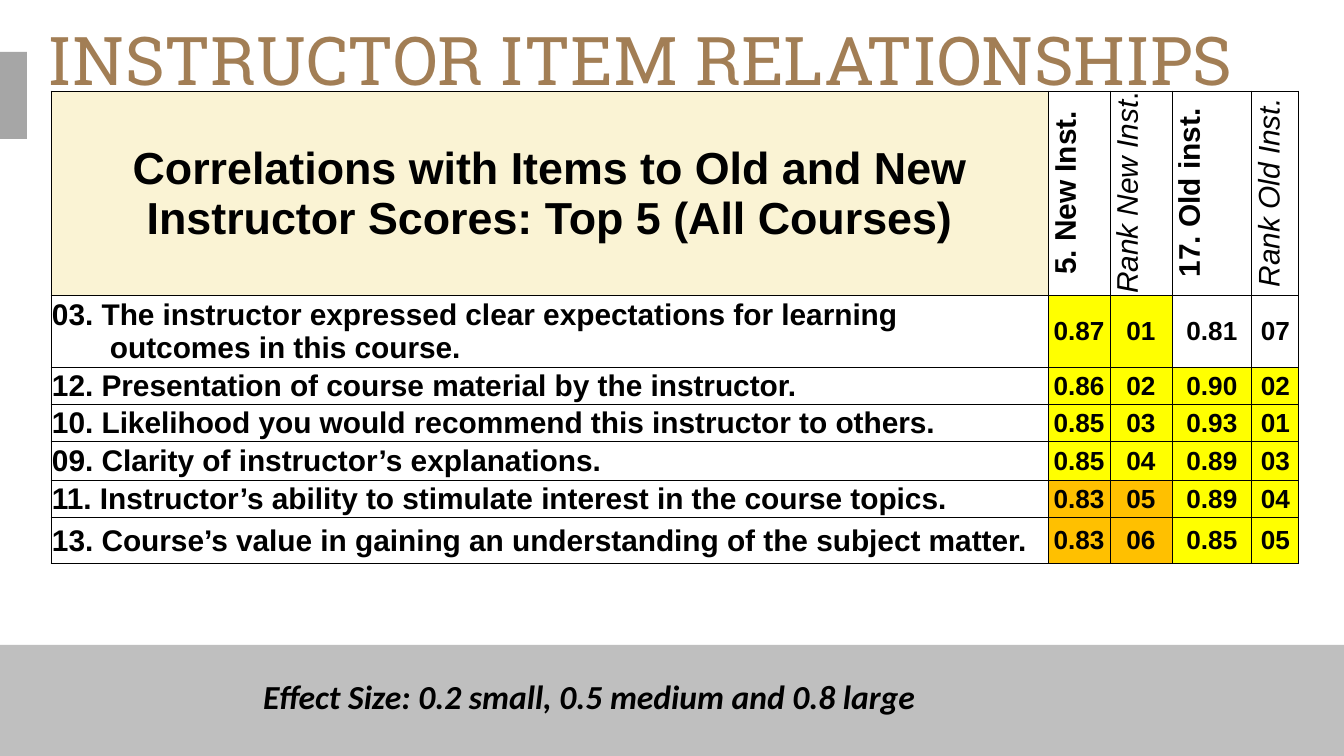
"""Build the slide on how items correlate with instructor scores."""
from dataclasses import dataclass

from lxml import etree
from pptx import Presentation
from pptx.dml.color import RGBColor
from pptx.enum.shapes import MSO_SHAPE
from pptx.enum.text import MSO_ANCHOR, MSO_AUTO_SIZE, PP_ALIGN
from pptx.oxml.ns import qn
from pptx.util import Pt

RECTANGLE = MSO_SHAPE.RECTANGLE
MIDDLE, BOTTOM = MSO_ANCHOR.MIDDLE, MSO_ANCHOR.BOTTOM
LEFT, CENTER = PP_ALIGN.LEFT, PP_ALIGN.CENTER
GROW = MSO_AUTO_SIZE.SHAPE_TO_FIT_TEXT
EMU_PER_PX = 914400 / 134.4


@dataclass(frozen=True)
class Theme:
    """Colours, fonts and type sizes."""
    ink: str = "000000"
    title: str = "A27E55"
    footer: str = "BFBFBF"
    tab: str = "A6A6A6"
    heading: str = "FAF3D4"
    plain: str = "FFFFFF"
    strong: str = "FFFF00"
    medium: str = "FFC000"
    title_font: str = "Roboto Slab"
    table_font: str = "Arial"
    note_font: str = "Calibri"
    title_size: int = 36
    heading_size: int = 24
    item_size: int = 16
    note_size: int = 18
    value_size: int = 14
    border: float = 0.5


THEME = Theme()
COLUMN_WIDTHS = (997, 62, 62, 80, 47)
ROW_HEIGHTS = (204, 69, 36, 34, 39, 37, 46)
CELL_MARGINS = {"margin_left": 1, "margin_right": 1, "margin_top": 1, "margin_bottom": 0}
NO_MARGINS = dict.fromkeys(CELL_MARGINS, 0)
CONTINUATION_INDENT = 58

HEADING = "Correlations with Items to Old and New Instructor Scores: Top 5 (All Courses)"
BOLD, ITALIC = {"bold": True}, {"italic": True}
SCORE_HEADINGS = (
    [("5. New Inst.", BOLD)],
    [("Rank New Inst", ITALIC), (".", {})],
    [("17. Old inst.", BOLD)],
    [("Rank Old Inst.", ITALIC)],
)
YELLOW, ORANGE, WHITE = THEME.strong, THEME.medium, THEME.plain
ITEMS = (
    (("03. The instructor expressed clear expectations for learning",
      "outcomes in this course."), ("0.87", "01", "0.81", "07"), YELLOW, WHITE),
    (("12. Presentation of course material by the instructor.",),
     ("0.86", "02", "0.90", "02"), YELLOW, YELLOW),
    (("10. Likelihood you would recommend this instructor to others.",),
     ("0.85", "03", "0.93", "01"), YELLOW, YELLOW),
    (("09. Clarity of instructor’s explanations.",),
     ("0.85", "04", "0.89", "03"), YELLOW, YELLOW),
    (("11. Instructor’s ability to stimulate interest in the course topics.",),
     ("0.83", "05", "0.89", "04"), ORANGE, YELLOW),
    (("13. Course’s value in gaining an understanding of the subject matter.",),
     ("0.83", "06", "0.85", "05"), ORANGE, YELLOW),
)


def px(length):
    """Turn pixels into EMU."""
    return round(length * EMU_PER_PX)


def apply(target, values):
    """Set each named attribute on the target."""
    for name, value in values.items():
        setattr(target, name, value)


def set_margins(target, margins):
    """Set margins given in pixels."""
    apply(target, {name: px(value) for name, value in margins.items()})


def add_run(paragraph, text, font, size, color=THEME.ink, **style):
    """Append a formatted run."""
    run = paragraph.add_run()
    run.text = text
    apply(run.font, {"name": font, "size": Pt(size), **style})
    run.font.color.rgb = RGBColor.from_string(color)


def add_bar(slide, bounds, color):
    """Add a plain filled rectangle."""
    bar = slide.shapes.add_shape(RECTANGLE, *map(px, bounds))
    bar.shadow.inherit = False
    bar.fill.solid()
    bar.fill.fore_color.rgb = RGBColor.from_string(color)
    bar.line.fill.background()


def add_text(slide, bounds, text, frame_format, margins, **run_format):
    """Add a text box with one line of text."""
    frame = slide.shapes.add_textbox(*map(px, bounds)).text_frame
    apply(frame, frame_format)
    set_margins(frame, margins)
    add_run(frame.paragraphs[0], text, **run_format)


def add_borders(properties):
    """Draw thin lines on all four sides of a cell."""
    for side in ("a:lnL", "a:lnR", "a:lnT", "a:lnB"):
        line = etree.SubElement(properties, qn(side), w=str(Pt(THEME.border)))
        fill = etree.SubElement(line, qn("a:solidFill"))
        etree.SubElement(fill, qn("a:srgbClr"), val=THEME.ink)


def fill_cell(cell, paragraphs, size, align=CENTER, fill=None, upright=False):
    """Write paragraphs of runs into a bordered cell."""
    properties = cell._tc.get_or_add_tcPr()
    add_borders(properties)
    if upright:
        properties.set("vert", "vert270")
    if fill:
        cell.fill.solid()
        cell.fill.fore_color.rgb = RGBColor.from_string(fill)
    else:
        cell.fill.background()
    cell.vertical_anchor = BOTTOM if upright else MIDDLE
    set_margins(cell, CELL_MARGINS)
    for index, runs in enumerate(paragraphs):
        frame = cell.text_frame
        paragraph = frame.add_paragraph() if index else frame.paragraphs[0]
        paragraph.alignment = align
        if index:
            paragraph._p.get_or_add_pPr().set("marL", str(px(CONTINUATION_INDENT)))
        for text, style in runs:
            add_run(paragraph, text, THEME.table_font, size, **{"bold": False, **style})


def add_correlations(slide, left, top):
    """Add the table of items and their correlations."""
    bounds = (left, top, sum(COLUMN_WIDTHS), sum(ROW_HEIGHTS))
    table = slide.shapes.add_table(
        len(ROW_HEIGHTS), len(COLUMN_WIDTHS), *map(px, bounds)).table
    apply(table, {"first_row": False, "horz_banding": False})
    for column, width in zip(table.columns, COLUMN_WIDTHS):
        column.width = px(width)
    for row, height in zip(table.rows, ROW_HEIGHTS):
        row.height = px(height)

    fill_cell(table.cell(0, 0), [[(HEADING, BOLD)]], THEME.heading_size, fill=THEME.heading)
    for column, runs in enumerate(SCORE_HEADINGS, 1):
        fill_cell(table.cell(0, column), [runs], THEME.item_size, upright=True)
    for row, (lines, scores, new_fill, old_fill) in enumerate(ITEMS, 1):
        fill_cell(table.cell(row, 0), [[(line, BOLD)] for line in lines],
                  THEME.item_size, LEFT, THEME.plain)
        fills = (new_fill, new_fill, old_fill, old_fill)
        for column, (score, fill) in enumerate(zip(scores, fills), 1):
            fill_cell(table.cell(row, column), [[(score, BOLD)]], THEME.value_size, fill=fill)


def main():
    """Build and save the slide."""
    deck = Presentation()
    apply(deck, {"slide_width": px(1344), "slide_height": px(756)})
    slide = deck.slides.add_slide(deck.slide_layouts[6])
    add_bar(slide, (0, 645, 1344, 111), THEME.footer)
    add_bar(slide, (-4, 52, 31, 87), THEME.tab)
    add_text(slide, (48, 16, 1210, 85), "INSTRUCTOR ITEM RELATIONSHIPS",
             {"word_wrap": True, "vertical_anchor": MIDDLE}, NO_MARGINS,
             font=THEME.title_font, size=THEME.title_size, color=THEME.title)
    add_correlations(slide, 51, 91)
    add_text(slide, (250, 669, 688, 54), "Effect Size: 0.2 small, 0.5 medium and 0.8 large",
             {"word_wrap": False, "auto_size": GROW}, {},
             font=THEME.note_font, size=THEME.note_size, bold=True, italic=True)
    deck.save("out.pptx")


if __name__ == "__main__":
    main()
